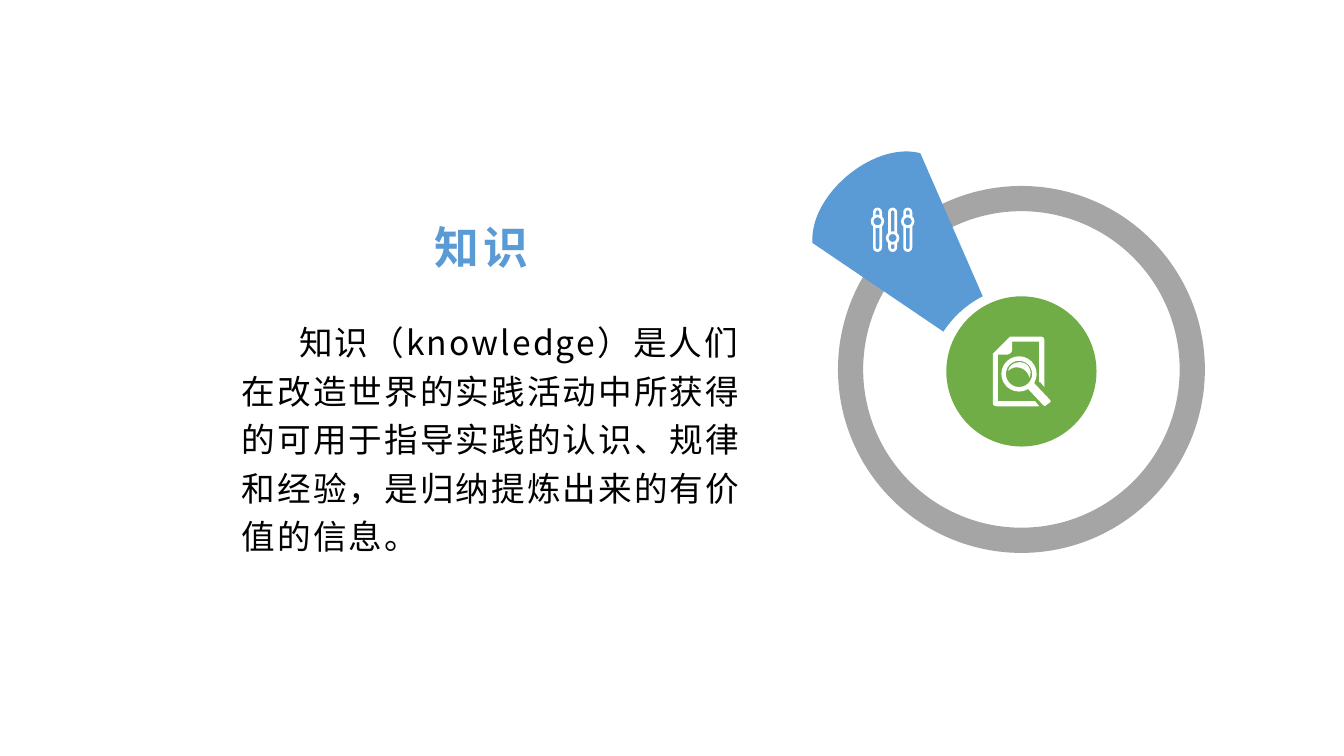
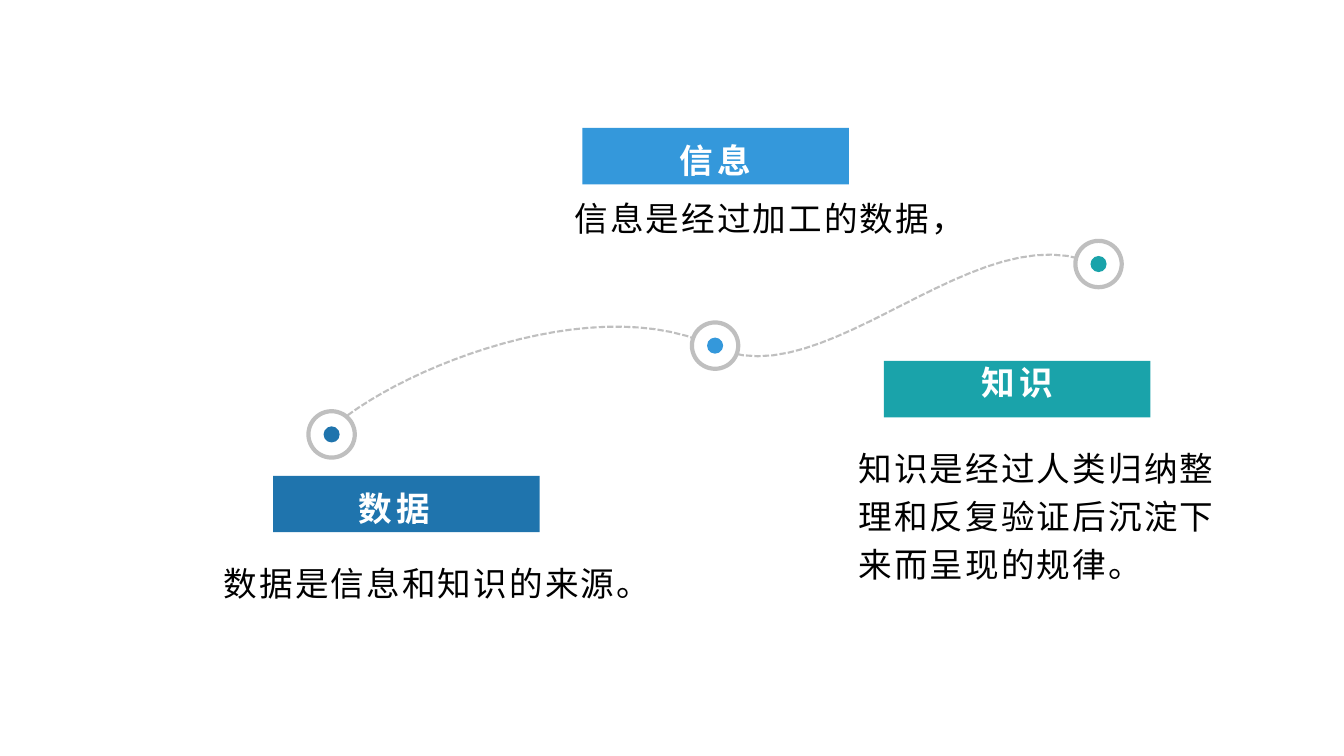
from dataclasses import dataclass

from lxml.etree import SubElement
from pptx import Presentation
from pptx.dml.color import RGBColor
from pptx.enum.dml import MSO_LINE
from pptx.enum.shapes import MSO_SHAPE
from pptx.enum.text import MSO_ANCHOR, MSO_AUTO_SIZE, PP_ALIGN
from pptx.oxml.ns import qn
from pptx.util import Pt


@dataclass(frozen=True)
class Theme:
    """Colours, fonts and type sizes shared by the slides."""
    white: str = "FFFFFF"
    text: str = "000000"
    accent: str = "5B9BD5"
    hub: str = "70AD47"
    ring: str = "A5A5A5"
    trail: str = "BFBFBF"
    data: str = "1F74AD"
    information: str = "3498DB"
    knowledge: str = "1AA3AA"
    latin: str = "Arial"
    chinese: str = "Noto Sans CJK SC"
    title_size: float = 32
    body_size: float = 24
    line_spacing: float = 1.2
    title_tracking: float = 3
    body_tracking: float = 1.5


THEME = Theme()

PAGE_ICON = [
    (739.4, 286.6), (712.8, 286.6), (712.8, 253.4), (718.6, 253.4),
    ((720.7, 253.4), (722.9, 252), (722.9, 249.8)),
    (722.9, 244.1), (742.3, 244.1), (742.3, 272.9), (743, 272.9), (745.9, 276.5), (745.9, 242.6),
    ((745.9, 241.9), (745.2, 240.5), (743.8, 240.5)),
    (721.4, 240.5), (709.2, 252.7), (709.2, 288),
    ((709.2, 289.4), (710.6, 290.2), (712.1, 290.2)),
    (742.3, 290.2),
]
HANDLE = [
    (738.7, 273.6), (750.2, 285.8),
    ((750.6, 286.4), (750.6, 286.8), (750.2, 287.3)),
    (747.4, 289.4),
    ((746.6, 290.2), (745.9, 290.2), (745.2, 289.4)),
    (734.4, 277.9),
]
GLINT = [
    (723.6, 262.8),
    ((728.6, 261.4), (733.7, 264.2), (735.1, 269.3)),
    (735.1, 270),
    ((735.8, 268.6), (736.6, 266.4), (735.8, 264.2)),
    ((734.4, 259.9), (730.1, 257.8), (725.8, 259.2)),
    ((722.9, 259.9), (720.7, 262.1), (720, 265)),
    ((720.7, 264.2), (722.2, 263.5), (723.6, 262.8)),
]
WEDGE = [
    (702, 211.7), (657.4, 109.4),
    ((624.2, 100.8), (578.2, 139), (580.3, 173.5)),
    (673.9, 236.9),
    ((681.1, 226.1), (690.5, 217.4), (702, 211.7)),
]
TRAIL = [
    (248.4, 296.6),
    ((305.3, 254.9), (432.7, 209.5), (510.5, 247.7)),
    ((589, 285.8), (699.1, 149), (784.1, 189.4)),
]


def paint(shape, fill=None, line=None, weight=1):
    """Set the fill and outline of a shape and drop its shadow."""
    shape.shadow.inherit = False
    if fill:
        shape.fill.solid()
        shape.fill.fore_color.rgb = RGBColor.from_string(fill)
    else:
        shape.fill.background()
    if line:
        shape.line.color.rgb = RGBColor.from_string(line)
        shape.line.width = Pt(weight)
    else:
        shape.line.fill.background()
    return shape


def preset(page, kind, left, top, width, height, **style):
    """Add a painted preset shape."""
    shape = page.shapes.add_shape(kind, Pt(left), Pt(top), Pt(width), Pt(height))
    return paint(shape, **style)


def circle(page, center, diameter, **style):
    """Add a circle around a centre."""
    left, top = (value - diameter / 2 for value in center)
    return preset(page, MSO_SHAPE.OVAL, left, top, diameter, diameter, **style)


def trace(route, steps=24):
    """Turn corners and Bézier triples into a list of points."""
    points = [route[0]]
    for leg in route[1:]:
        if not isinstance(leg[0], tuple):
            points.append(leg)
            continue
        controls = (points[-1], *leg)
        for step in range(1, steps + 1):
            t = step / steps
            weights = ((1 - t) ** 3, 3 * t * (1 - t) ** 2, 3 * t * t * (1 - t), t ** 3)
            points.append(tuple(
                sum(weight * control[axis] for weight, control in zip(weights, controls))
                for axis in (0, 1)))
    return points


def outline(page, route, closed=True, **style):
    """Add a painted freeform along a route."""
    points = [(Pt(x), Pt(y)) for x, y in trace(route)]
    builder = page.shapes.build_freeform(*points[0])
    builder.add_line_segments(points[1:], close=closed)
    return paint(builder.convert_to_shape(), **style)


def write(box, text, color=THEME.text, size=THEME.body_size, bold=False, latin=THEME.latin,
          tracking=THEME.body_tracking, align=PP_ALIGN.LEFT, anchor=MSO_ANCHOR.TOP, indent=0):
    """Put one formatted paragraph into a box."""
    frame = box.text_frame
    frame.word_wrap = True
    frame.auto_size = MSO_AUTO_SIZE.NONE
    frame.vertical_anchor = anchor
    para = frame.paragraphs[0]
    para.alignment = align
    para.line_spacing = THEME.line_spacing
    if indent:
        para._p.get_or_add_pPr().set("indent", str(Pt(indent)))
    span = para.add_run()
    span.text = text
    span.font.size = Pt(size)
    span.font.bold = bold
    span.font.name = latin
    span.font.color.rgb = RGBColor.from_string(color)
    properties = span._r.get_or_add_rPr()
    properties.set("spc", str(int(tracking * 100)))
    SubElement(properties, qn("a:ea")).set("typeface", THEME.chinese)


def body(page, text, left, top, width, height, **style):
    """Add a box of body text."""
    write(page.shapes.add_textbox(Pt(left), Pt(top), Pt(width), Pt(height)), text, **style)


def title(page, text, left, top, width, height):
    """Place and format the title placeholder."""
    box = page.shapes.title
    box.left, box.top, box.width, box.height = Pt(left), Pt(top), Pt(width), Pt(height)
    write(box, text, color=THEME.accent, size=THEME.title_size, bold=True, latin=THEME.chinese,
          tracking=THEME.title_tracking, anchor=MSO_ANCHOR.BOTTOM)


def label(page, text, left, top, fill, right=0, bottom=0):
    """Add a coloured label with optional extra insets."""
    box = preset(page, MSO_SHAPE.RECTANGLE, left, top, 190.4, 40.3, fill=fill)
    frame = box.text_frame
    frame.margin_left = frame.margin_top = 0
    frame.margin_right, frame.margin_bottom = Pt(right), Pt(bottom)
    write(box, text, color=THEME.white, bold=True, tracking=THEME.title_tracking,
          align=PP_ALIGN.CENTER, anchor=MSO_ANCHOR.MIDDLE)


def slider(page, center, knob):
    """Add one slider of the control icon."""
    stroke = dict(fill=THEME.accent, line=THEME.white, weight=1.9)
    track = preset(page, MSO_SHAPE.ROUNDED_RECTANGLE, center - 2.25, 149.3, 4.5, 29.7, **stroke)
    track.adjustments[0] = 0.5
    circle(page, (center, knob), 7.7, **stroke)


def node(page, center, color):
    """Add one ringed stop on the trail."""
    circle(page, center, 33.1, fill=THEME.white, line=THEME.trail, weight=3)
    circle(page, center, 11.5, fill=color)


def definition_page(deck):
    """Build the slide that defines knowledge."""
    page = deck.slides.add_slide(deck.slide_layouts[5])
    title(page, "知识", 303.1, 159.1, 193, 39.6)
    body(page, "知识（knowledge）是人们在改造世界的实践活动中所获得的可用于指导实践的认识、"
               "规律和经验，是归纳提炼出来的有价值的信息。",
         165.6, 221, 383, 182.2, latin=THEME.chinese, indent=41)
    circle(page, (729.6, 263.9), 244.1, line=THEME.ring, weight=18)
    circle(page, (729.6, 265.3), 107.3, fill=THEME.hub)
    for route in (PAGE_ICON, HANDLE, GLINT):
        outline(page, route, fill=THEME.white)
    circle(page, (727.9, 267.1), 22, line=THEME.white, weight=3.2)
    outline(page, WEDGE, fill=THEME.accent)
    for index, knob in enumerate((158.1, 170, 158.1)):
        slider(page, 626.8 + 10.8 * index, knob)


def journey_page(deck):
    """Build the slide that leads from data to knowledge."""
    page = deck.slides.add_slide(deck.slide_layouts[6])
    trail = outline(page, TRAIL, closed=False, line=THEME.trail, weight=1.5)
    trail.line.dash_style = MSO_LINE.SQUARE_DOT
    node(page, (236.9, 310.3), THEME.data)
    node(page, (510.8, 246.9), THEME.information)
    node(page, (784.7, 188.6), THEME.knowledge)
    label(page, "数据", 195.1, 339.9, THEME.data, right=17.3)
    label(page, "信息", 416, 91.4, THEME.information)
    label(page, "知识", 631.4, 257.8, THEME.knowledge, bottom=15.8)
    body(page, "数据是信息和知识的来源。", 141.8, 393.1, 316.8, 73.4, align=PP_ALIGN.CENTER)
    body(page, "信息是经过加工的数据，", 401, 131.8, 273.6, 64.8, align=PP_ALIGN.CENTER)
    body(page, "知识是经过人类归纳整理和反复验证后沉淀下来而呈现的规律。",
         606.2, 310.3, 274.3, 178.6)


def main():
    """Build and save the deck."""
    deck = Presentation()
    deck.slide_width, deck.slide_height = Pt(960), Pt(540)
    definition_page(deck)
    journey_page(deck)
    deck.save("out.pptx")


if __name__ == "__main__":
    main()
